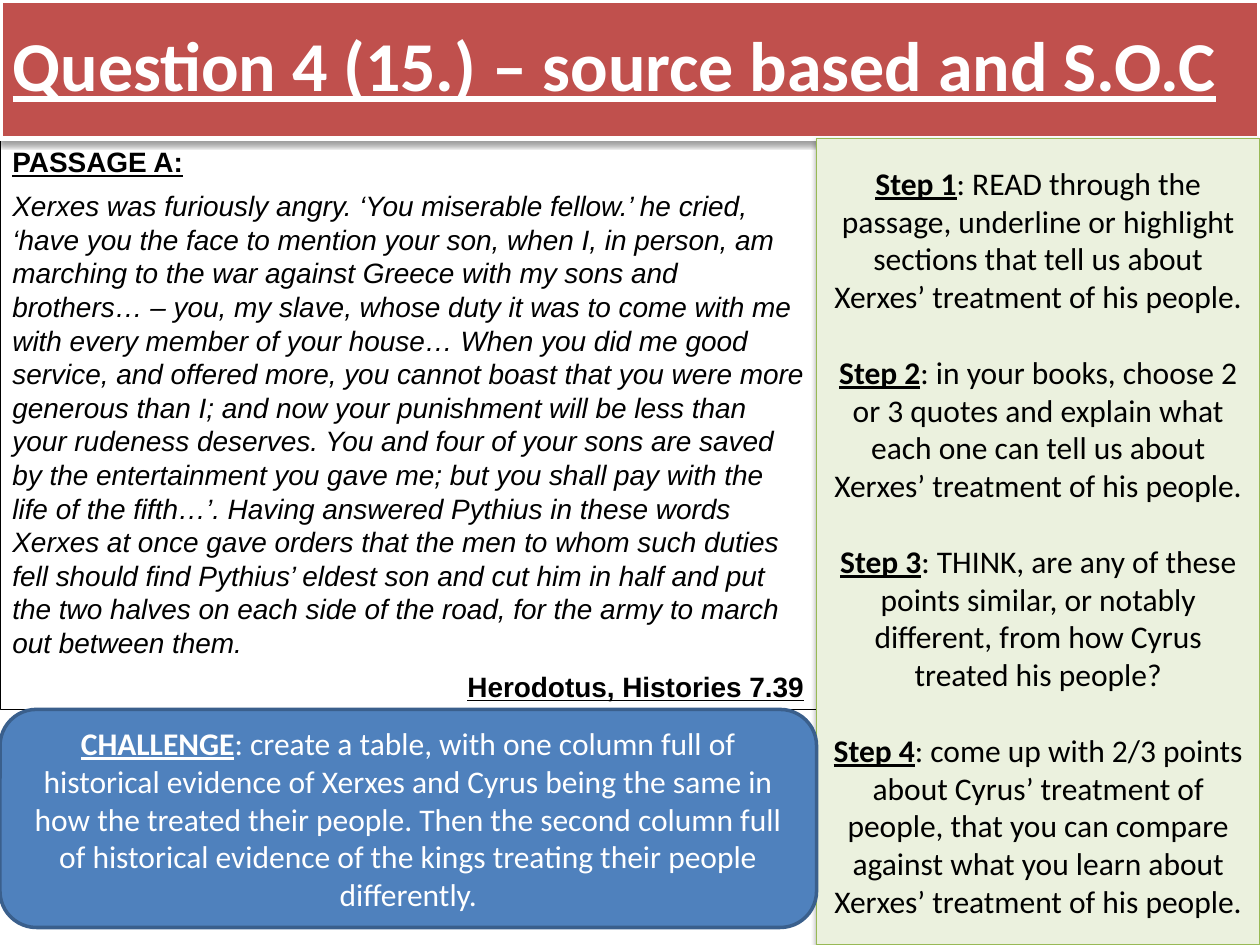
from lxml import etree
from pptx import Presentation
from pptx.dml.color import RGBColor
from pptx.enum.shapes import MSO_SHAPE
from pptx.enum.text import MSO_ANCHOR, MSO_AUTO_SIZE, PP_ALIGN
from pptx.oxml.ns import qn
from pptx.util import Pt

RECTANGLE, ROUNDED = MSO_SHAPE.RECTANGLE, MSO_SHAPE.ROUNDED_RECTANGLE
TOP, MIDDLE = MSO_ANCHOR.TOP, MSO_ANCHOR.MIDDLE
LEFT, CENTER, RIGHT = PP_ALIGN.LEFT, PP_ALIGN.CENTER, PP_ALIGN.RIGHT
NO_AUTOFIT = MSO_AUTO_SIZE.NONE

BLACK = RGBColor(0x00, 0x00, 0x00)
WHITE = RGBColor(0xFF, 0xFF, 0xFF)
RED = RGBColor(0xC0, 0x50, 0x4D)
PALE_GREEN = RGBColor(0xEB, 0xF1, 0xDE)
GREEN = RGBColor(0x98, 0xB9, 0x55)
BLUE = RGBColor(0x4F, 0x81, 0xBD)
DARK_BLUE = RGBColor(0x3A, 0x5F, 0x8C)

WIDTH, HEIGHT = 720, 540
TITLE_HEIGHT = 79.2
PASSAGE_WIDTH = 466.6
PASSAGE_HEIGHT = 326.2
CHALLENGE_HEIGHT = 124.6

PASSAGE = (
    "Xerxes was furiously angry. ‘You miserable fellow.’ he cried, ‘have you the face "
    "to mention your son, when I, in person, am marching to the war against Greece with "
    "my sons and brothers… – you, my slave, whose duty it was to come with me with every "
    "member of your house… When you did me good service, and offered more, you cannot "
    "boast that you were more generous than I; and now your punishment will be less than "
    "your rudeness deserves. You and four of your sons are saved by the entertainment you "
    "gave me; but you shall pay with the life of the fifth…’. Having answered Pythius in "
    "these words Xerxes at once gave orders that the men to whom such duties fell should "
    "find Pythius’ eldest son and cut him in half and put the two halves on each side of "
    "the road, for the army to march out between them."
)
STEPS = [
    ("Step 1", ": READ through the passage, underline or highlight sections that tell us "
               "about Xerxes’ treatment of his people."),
    ("Step 2", ": in your books, choose 2 or 3 quotes and explain what each one can tell "
               "us about Xerxes’ treatment of his people."),
    ("Step 3", ": THINK, are any of these points similar, or notably different, from how "
               "Cyrus treated his people?"),
    ("Step 4", ": come up with 2/3 points about Cyrus’ treatment of people, that you can "
               "compare against what you learn about Xerxes’ treatment of his people."),
]
CHALLENGE = [
    ("CHALLENGE", ": create a table, with one column full of historical evidence of Xerxes "
                  "and Cyrus being the same in how the treated their people. Then the second "
                  "column full of historical evidence of the kings treating their people "
                  "differently."),
]


def style_panel(panel, box, fill, line, line_width, anchor, shadow=False):
    panel.left, panel.top, panel.width, panel.height = map(Pt, box)
    panel.fill.solid()
    panel.fill.fore_color.rgb = fill
    panel.line.color.rgb = line
    panel.line.width = Pt(line_width)
    panel.shadow.inherit = False
    if shadow:
        effects = panel.element.spPr.find(qn("a:effectLst"))
        outer = etree.SubElement(effects, qn("a:outerShdw"), blurRad=str(Pt(3.1)),
                                 dist=str(Pt(1.6)), dir="5400000", rotWithShape="0")
        black = etree.SubElement(outer, qn("a:srgbClr"), val=str(BLACK))
        etree.SubElement(black, qn("a:alpha"), val="38000")
    frame = panel.text_frame
    frame.word_wrap = True
    frame.auto_size = NO_AUTOFIT
    frame.vertical_anchor = anchor


def write_paragraph(frame, index, heading, body, font_name, size, color, align):
    """Write an underlined bold heading followed by plain body text."""
    paragraph = frame.add_paragraph() if index else frame.paragraphs[0]
    paragraph.alignment = align
    for words, strong in ((heading, True), (body, False)):
        if words:
            run = paragraph.add_run()
            run.text = words
            run.font.name = font_name
            run.font.size = Pt(size)
            run.font.color.rgb = color
            run.font.bold = run.font.underline = strong
    return paragraph


prs = Presentation()
prs.slide_width, prs.slide_height = Pt(WIDTH), Pt(HEIGHT)
slide = prs.slides.add_slide(prs.slide_layouts[5])

title = slide.shapes.title
style_panel(title, (0, 0, WIDTH, TITLE_HEIGHT), RED, WHITE, 3, MIDDLE, shadow=True)
heading = write_paragraph(title.text_frame, 0, "Question 4 (15.) – source based and S.O.C",
                          "", "Calibri", 40, WHITE, LEFT)
heading.line_spacing = 0.9

# The passage lies behind the title, so that the title's shadow falls on it.
passage = slide.shapes.add_shape(RECTANGLE, 0, 0, 0, 0)
title.element.addprevious(passage.element)
style_panel(passage, (0, TITLE_HEIGHT, PASSAGE_WIDTH, PASSAGE_HEIGHT), WHITE, BLACK, 0.5, TOP)
passage_parts = [("PASSAGE A:", "", LEFT), ("", PASSAGE, LEFT),
                 ("Herodotus, Histories 7.39", "", RIGHT)]
for index, (label, quote, align) in enumerate(passage_parts):
    paragraph = write_paragraph(passage.text_frame, index, label, quote,
                                "Arial", 16, BLACK, align)
    paragraph.space_after = Pt(6)
    paragraph.runs[0].font.italic = bool(quote)

steps = slide.shapes.add_shape(RECTANGLE, 0, 0, 0, 0)
style_panel(steps, (PASSAGE_WIDTH, TITLE_HEIGHT, WIDTH - PASSAGE_WIDTH, HEIGHT - TITLE_HEIGHT),
            PALE_GREEN, GREEN, 0.75, MIDDLE, shadow=True)
challenge = slide.shapes.add_shape(ROUNDED, 0, 0, 0, 0)
style_panel(challenge, (0, TITLE_HEIGHT + PASSAGE_HEIGHT, PASSAGE_WIDTH, CHALLENGE_HEIGHT),
            BLUE, DARK_BLUE, 2, MIDDLE)

for panel, tasks, color in ((steps, STEPS, BLACK), (challenge, CHALLENGE, WHITE)):
    for index, (label, task) in enumerate(tasks):
        paragraph = write_paragraph(panel.text_frame, index, label, task,
                                    "Calibri", 18, color, CENTER)
        if index:
            paragraph.space_before = Pt(21.6)

prs.save("out.pptx")
